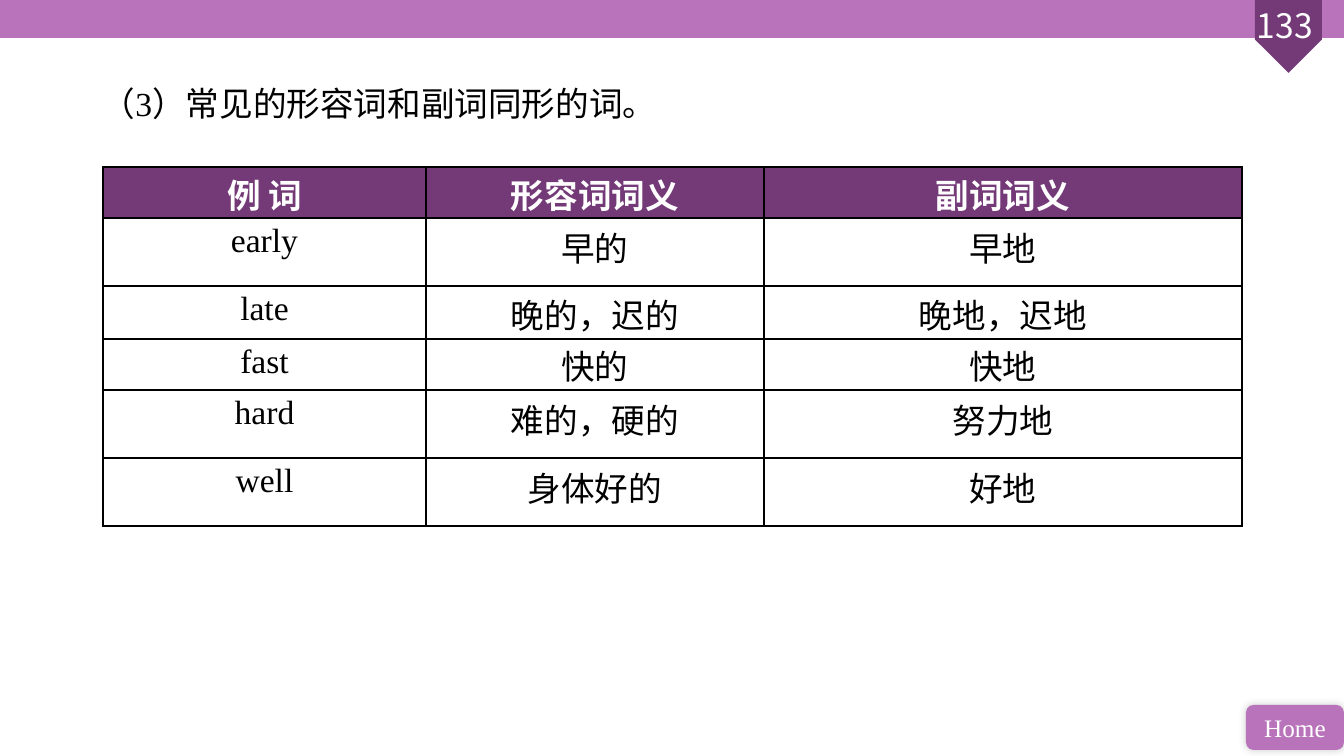
from lxml.etree import SubElement
from pptx import Presentation
from pptx.dml.color import RGBColor
from pptx.enum.shapes import MSO_SHAPE
from pptx.enum.text import MSO_ANCHOR, PP_ALIGN
from pptx.oxml.ns import qn
from pptx.util import Pt

TITLE = "（3）常见的形容词和副词同形的词。"
PAGE = "133 "
HOME = "Home"
ROWS = [
    ("例 词", "形容词词义", "副词词义"),
    ("early", "早的", "早地"),
    ("late", "晚的，迟的", "晚地，迟地"),
    ("fast", "快的", "快地"),
    ("hard", "难的，硬的", "努力地"),
    ("well", "身体好的", "好地"),
]
COL_WIDTHS = [323, 338, 478]
ROW_HEIGHTS = [51, 68, 53, 51, 68, 68]
COLORS = {"bar": "B873BB", "dark": "743A78", "white": "FFFFFF", "black": "000000"}
SERIF, SANS = "Times New Roman", "Noto Sans CJK SC"
CJK_LINE, CELL_MARGIN = 49, 5
SCALE = 914400 / 100.8


def px(n):
    return round(n * SCALE)


def rgb(name):
    return RGBColor.from_string(COLORS[name])


def write(tf, text, color, size=24, font=SERIF, align=PP_ALIGN.CENTER, bold=False):
    tf.text = text
    p = tf.paragraphs[0]
    p.alignment = align
    r = p.runs[0]
    r.font.size = Pt(size)
    r.font.name = font
    r.font.bold = bold
    r.font.color.rgb = rgb(color)
    SubElement(r.font._element, qn("a:ea"), typeface=SANS)
    return p


def add_shape(s, kind, box, color):
    sp = s.shapes.add_shape(kind, *map(px, box))
    sp.shadow.inherit = False
    sp.fill.solid()
    sp.fill.fore_color.rgb = rgb(color)
    sp.line.fill.background()
    return sp


def add_text(s, box, text, color, **style):
    tf = s.shapes.add_textbox(*map(px, box)).text_frame
    tf.word_wrap = True
    return write(tf, text, color, **style)


def add_glow_shadow(sp):
    effects = sp._element.spPr.find(qn("a:effectLst"))
    shadow = SubElement(effects, qn("a:outerShdw"), blurRad=str(Pt(6)), dist="0",
                        dir="18900000", rotWithShape="0")
    color = SubElement(shadow, qn("a:srgbClr"), val=COLORS["black"])
    SubElement(color, qn("a:alpha"), val="20000")


def add_borders(cell):
    tcPr = cell._tc.get_or_add_tcPr()
    for i, side in enumerate(("lnL", "lnR", "lnT", "lnB")):
        ln = SubElement(tcPr, qn(f"a:{side}"), w=str(Pt(1)))
        fill = SubElement(ln, qn("a:solidFill"))
        SubElement(fill, qn("a:srgbClr"), val=COLORS["black"])
        tcPr.insert(i, ln)


def add_word_table(s, left, top):
    frame = s.shapes.add_table(len(ROWS), len(COL_WIDTHS), px(left), px(top),
                               px(sum(COL_WIDTHS)), px(sum(ROW_HEIGHTS)))
    table = frame.table
    table.horz_banding = False
    for col, width in zip(table.columns, COL_WIDTHS):
        col.width = px(width)
    for i, (words, height) in enumerate(zip(ROWS, ROW_HEIGHTS)):
        table.rows[i].height = px(height)
        header = i == 0
        for j, word in enumerate(words):
            cell = table.cell(i, j)
            room = CELL_MARGIN if word.isascii() else height - CJK_LINE
            cell.margin_top = px(min(CELL_MARGIN, room))
            cell.margin_bottom = 0
            cell.vertical_anchor = MSO_ANCHOR.MIDDLE if header else MSO_ANCHOR.TOP
            write(cell.text_frame, word, "white" if header else "black", bold=header)
            if header:
                cell.fill.solid()
                cell.fill.fore_color.rgb = rgb("dark")
            else:
                cell.fill.background()
            add_borders(cell)


def main():
    prs = Presentation()
    prs.slide_width, prs.slide_height = px(1344), px(756)
    s = prs.slides.add_slide(prs.slide_layouts[6])

    add_shape(s, MSO_SHAPE.RECTANGLE, (0, 0, 1344, 38), "bar")
    badge = add_shape(s, MSO_SHAPE.PENTAGON, (1252, 3, 73, 67), "dark")
    badge.rotation = 90
    add_text(s, (1239, 0, 99, 50), PAGE, "white", font=SANS)

    home = add_shape(s, MSO_SHAPE.ROUNDED_RECTANGLE, (1246, 705, 98, 45), "bar")
    add_glow_shadow(home)
    home.text_frame.vertical_anchor = MSO_ANCHOR.MIDDLE
    write(home.text_frame, HOME, "white", size=18)

    add_word_table(s, 103, 167)

    p = add_text(s, (42, 70, 794, 58), TITLE, "black", align=PP_ALIGN.LEFT)
    p.line_spacing = 1.2
    p._p.get_or_add_pPr().set("indent", str(px(50)))

    prs.save("out.pptx")


if __name__ == "__main__":
    main()
